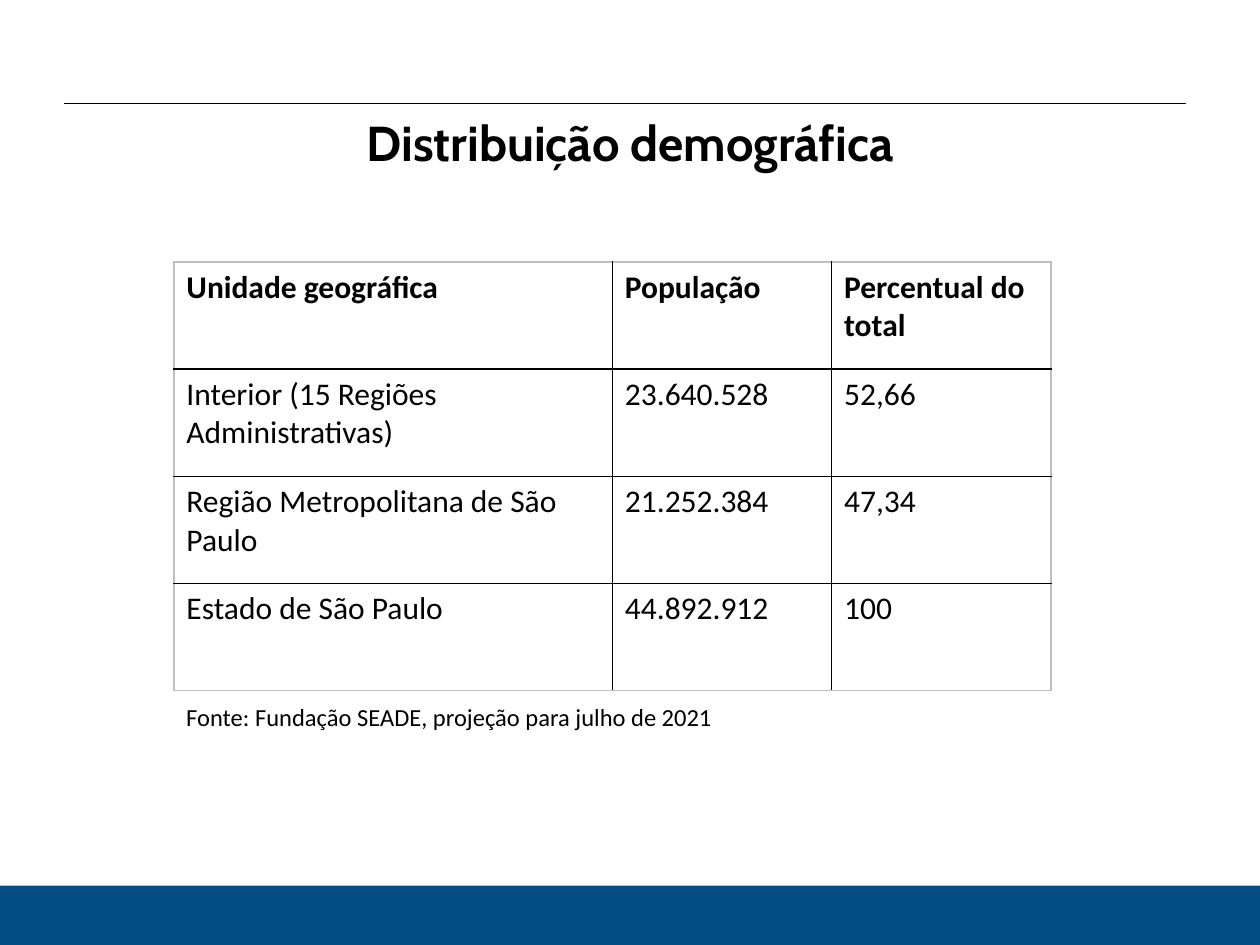
from lxml import etree
from pptx import Presentation, util as u
from pptx.dml.color import RGBColor
from pptx.enum import shapes, text
from pptx.oxml.ns import qn

BLACK, GREY, BLUE = "000000", "BFBFBF", "034E84"


def color(value):
    return RGBColor.from_string(value)


def write(frame, words, size, face="Calibri", bold=False):
    frame.word_wrap = True
    run = frame.paragraphs[0].add_run()
    run.text = words
    run.font.size, run.font.name, run.font.bold = u.Pt(size), face, bold
    run.font.color.rgb = color(BLACK)


deck = Presentation()
deck.slide_width, deck.slide_height = u.Inches(10), u.Inches(7.5)
slide = deck.slides.add_slide(deck.slide_layouts[5])

# Footer band
band_top = u.Inches(7.03)
band = slide.shapes.add_shape(shapes.MSO_SHAPE.RECTANGLE, 0, band_top,
                              deck.slide_width, deck.slide_height - band_top)
band.shadow.inherit = False
band.fill.solid()
band.fill.fore_color.rgb = color(BLUE)
band.line.fill.background()

# Rule above the title
rule = slide.shapes.add_connector(shapes.MSO_CONNECTOR.STRAIGHT, u.Inches(0.51), u.Inches(0.82),
                                  u.Inches(9.41), u.Inches(0.82))
rule.line.color.rgb = color(BLACK)
rule.line.width = u.Pt(0.75)
etree.SubElement(rule._element.spPr, qn("a:effectLst"))

# Title
title = slide.shapes.title
title.left, title.top = u.Inches(0.47), u.Inches(0.84)
title.width, title.height = u.Inches(9.06), u.Inches(0.57)
title.text_frame.vertical_anchor = text.MSO_ANCHOR.TOP
title.text_frame.auto_size = text.MSO_AUTO_SIZE.NONE
title.text_frame.paragraphs[0].alignment = text.PP_ALIGN.CENTER
write(title.text_frame, "Distribuição demográfica", 28, "Cabin", True)

# Population table: four equal columns wide, the first one spanning two
population = [
    ("Unidade geográfica", "População", "Percentual do total"),
    ("Interior (15 Regiões Administrativas)", "23.640.528", "52,66"),
    ("Região Metropolitana de São Paulo", "21.252.384", "47,34"),
    ("Estado de São Paulo", "44.892.912", "100"),
]
left, top, column, row_height = u.Inches(1.38), u.Inches(2.08), u.Inches(1.74), u.Inches(0.85)
spans = (2, 1, 1)
last_row, last_col = len(population) - 1, len(spans) - 1
table = slide.shapes.add_table(len(population), len(spans), left, top,
                               column * sum(spans), row_height * len(population)).table
table.first_row = table.horz_banding = False
for col, span in zip(table.columns, spans):
    col.width = column * span

for r, record in enumerate(population):
    table.rows[r].height = row_height
    for c, words in enumerate(record):
        cell = table.cell(r, c)
        write(cell.text_frame, words, 18, bold=r == 0)
        # Grey frame outside, black lines inside
        outer = {"lnL": c == 0, "lnR": c == last_col, "lnT": r == 0, "lnB": r == last_row}
        for side, at_edge in outer.items():
            border = etree.SubElement(cell._tc.get_or_add_tcPr(), qn(f"a:{side}"), w=str(u.Pt(1)))
            fill = etree.SubElement(border, qn("a:solidFill"))
            etree.SubElement(fill, qn("a:srgbClr"), val=GREY if at_edge else BLACK)
        cell.fill.background()

# Source note
note = slide.shapes.add_textbox(left, u.Inches(5.52), column * sum(spans), u.Inches(0.34))
write(note.text_frame, "Fonte: Fundação SEADE, projeção para julho de 2021", 14)

deck.save("out.pptx")
